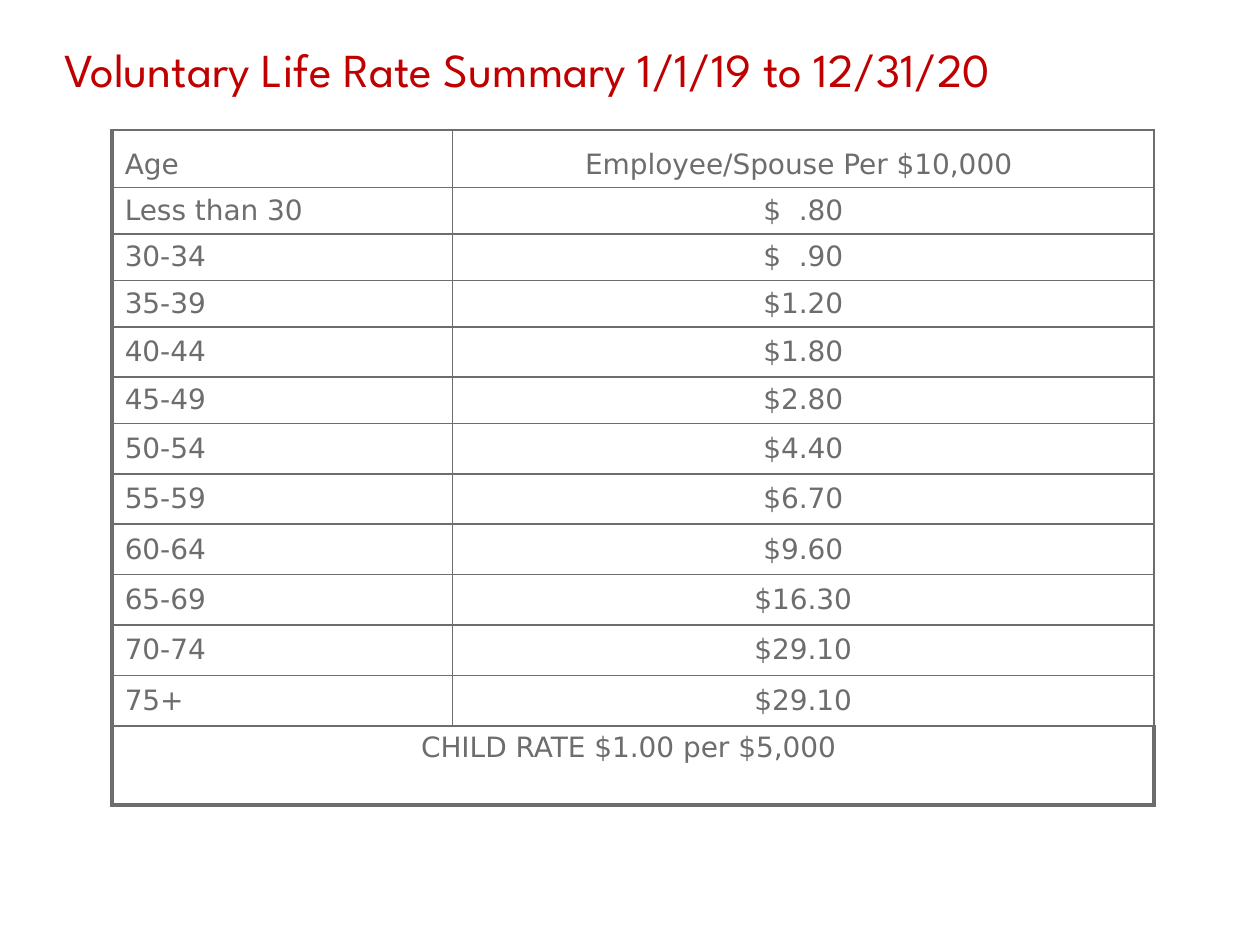
from dataclasses import dataclass

from lxml import etree
from pptx import Presentation
from pptx.dml.color import RGBColor
from pptx.enum.text import MSO_ANCHOR, PP_ALIGN
from pptx.oxml.ns import qn
from pptx.util import Inches, Pt

LEFT, CENTER = PP_ALIGN.LEFT, PP_ALIGN.CENTER
TOP, MIDDLE, BOTTOM = MSO_ANCHOR.TOP, MSO_ANCHOR.MIDDLE, MSO_ANCHOR.BOTTOM


@dataclass(frozen=True)
class Theme:
    accent: str = "C00000"
    ink: str = "6D6D70"
    title_font: str = "League Spartan"
    table_font: str = "DejaVu Sans"
    title_size: float = 27
    table_size: float = 16
    thin: float = 1
    thick: float = 2.25


THEME = Theme()
SLIDE_W, SLIDE_H = 10, 7.5
TITLE = "Voluntary Life Rate Summary 1/1/19 to 12/31/20"
HEADER = ("Age", "Employee/Spouse Per $10,000 ")
RATES = [
    ("Less than 30", "$  .80"),
    ("30-34", "$  .90"),
    ("35-39", "$1.20"),
    ("40-44", "$1.80"),
    ("45-49", "$2.80"),
    ("50-54", "$4.40"),
    ("55-59", "$6.70"),
    ("60-64", "$9.60"),
    ("65-69", "$16.30"),
    ("70-74", "$29.10"),
    ("75+", "$29.10"),
]
CHILD_RATE = "CHILD RATE $1.00 per $5,000 "
COLUMN_WIDTHS = (2.7, 5.57)
HEADER_HEIGHT, RATE_HEIGHT, CHILD_HEIGHT = 0.46, 0.4, 0.63
TIGHT_HEIGHTS = {"Less than 30": 0.36, "30-34": 0.37, "35-39": 0.36, "45-49": 0.36}


def write_text(frame, text, *, font, size, color, align=LEFT, line_spacing=None):
    paragraph = frame.paragraphs[0]
    paragraph.alignment = align
    paragraph.line_spacing = line_spacing
    run = paragraph.add_run()
    run.text = text
    run.font.name = font
    run.font.size = Pt(size)
    run.font.color.rgb = RGBColor.from_string(color)


def set_borders(cell, **widths):
    """Draw the cell's edges, thin unless a width is given for L, R, T or B."""
    properties = cell._tc.get_or_add_tcPr()
    for position, side in enumerate("LRTB"):
        width = Pt(widths.get(side, THEME.thin))
        line = etree.Element(qn(f"a:ln{side}"), w=str(int(width)))
        fill = etree.SubElement(line, qn("a:solidFill"))
        etree.SubElement(fill, qn("a:srgbClr"), val=THEME.ink)
        properties.insert(position, line)


def fill_cell(cell, text, align, anchor):
    cell.vertical_anchor = anchor
    cell.margin_left = cell.margin_right = Inches(0.1)
    cell.margin_top = cell.margin_bottom = Inches(0.05)
    write_text(cell.text_frame, text, font=THEME.table_font,
               size=THEME.table_size, color=THEME.ink, align=align)


def add_title(slide):
    box = slide.shapes.add_textbox(Inches(0.51), Inches(0.04 * SLIDE_H),
                                   Inches(9.19), Inches(0.73))
    frame = box.text_frame
    frame.word_wrap = True
    frame.margin_left = frame.margin_right = 0
    frame.margin_top = frame.margin_bottom = 0
    write_text(frame, TITLE, font=THEME.title_font, size=THEME.title_size,
               color=THEME.accent, line_spacing=1.05)


def add_rate_table(slide):
    heights = [HEADER_HEIGHT]
    heights += [TIGHT_HEIGHTS.get(age, RATE_HEIGHT) for age, _ in RATES]
    heights.append(CHILD_HEIGHT)
    table = slide.shapes.add_table(
        len(heights), len(COLUMN_WIDTHS), Inches(0.89), Inches(1.03),
        Inches(sum(COLUMN_WIDTHS)), Inches(sum(heights))).table
    table.first_row = table.horz_banding = False
    for column, width in zip(table.columns, COLUMN_WIDTHS):
        column.width = Inches(width)
    for row, height in zip(table.rows, heights):
        row.height = Inches(height)
    for cell in table.iter_cells():
        cell.fill.background()

    for row, values in enumerate([HEADER, *RATES]):
        anchor = MIDDLE if row else BOTTOM
        age, rate = table.cell(row, 0), table.cell(row, 1)
        fill_cell(age, values[0], LEFT, anchor)
        fill_cell(rate, values[1], CENTER, anchor)
        set_borders(age, L=THEME.thick)
        set_borders(rate)

    last = len(heights) - 1
    child = table.cell(last, 0)
    child.merge(table.cell(last, 1))
    fill_cell(child, CHILD_RATE, CENTER, TOP)
    for column in range(len(COLUMN_WIDTHS)):
        set_borders(table.cell(last, column),
                    L=THEME.thick, R=THEME.thick, B=THEME.thick)


def main():
    presentation = Presentation()
    presentation.slide_width = Inches(SLIDE_W)
    presentation.slide_height = Inches(SLIDE_H)
    slide = presentation.slides.add_slide(presentation.slide_layouts[6])
    add_title(slide)
    add_rate_table(slide)
    presentation.save("out.pptx")


if __name__ == "__main__":
    main()
